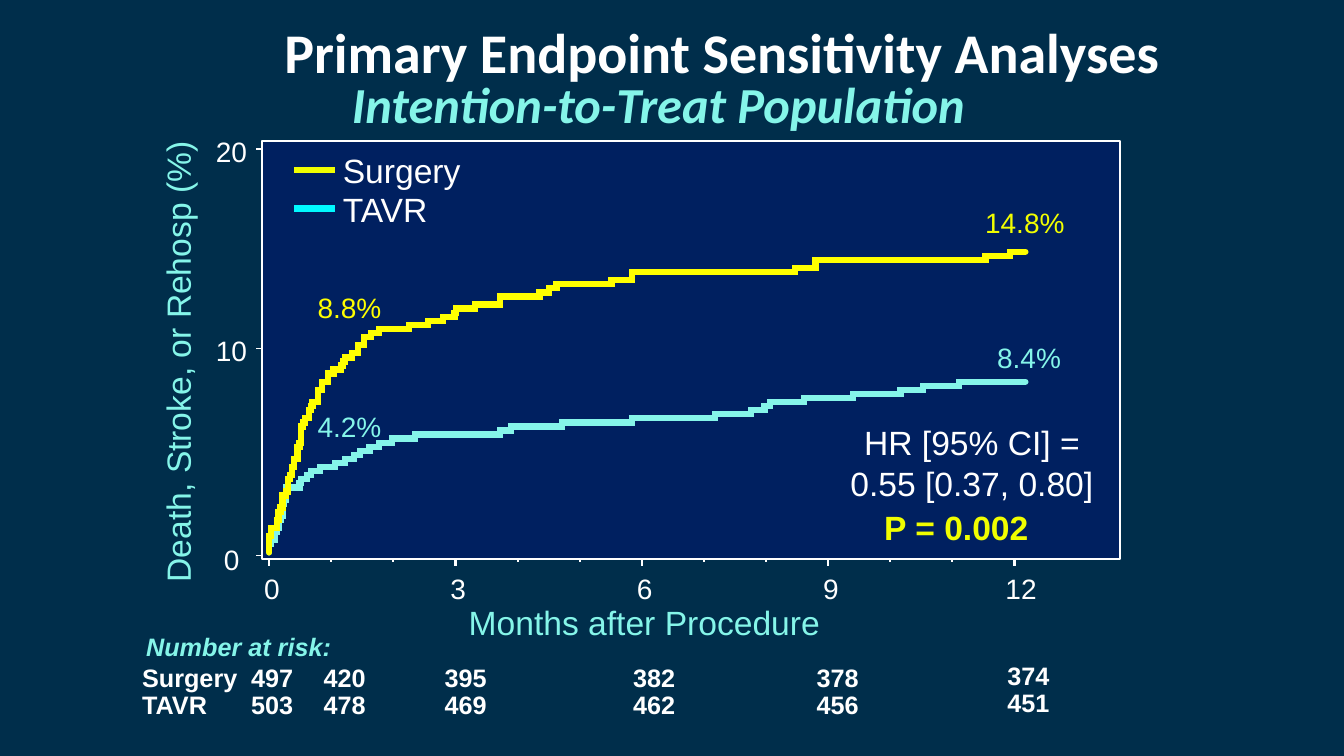
"""Build the slide of two cumulative event curves, worked out from event times."""
from collections import Counter
from lxml import etree
from pptx import Presentation
from pptx import util as u
from pptx.dml.color import RGBColor
from pptx.enum import shapes, text
from pptx.oxml.ns import qn

hues = {"back": "002E4B", "plot": "002060", "white": "FFFFFF", "mint": "85F5E9",
        "yellow": "FFFF00", "lemon": "F1FE00", "cyan": "00F9FF"}
hues = {name: RGBColor.from_string(code) for name, code in hues.items()}
inch = u.Inches

deck = Presentation()
deck.slide_width, deck.slide_height = inch(13.33), inch(7.5)
slide = deck.slides.add_slide(deck.slide_layouts[6])
slide.background.fill.solid()
slide.background.fill.fore_color.rgb = hues["back"]


def label(words, x, y, w, h, size, hue="white", bold=False, slant=False,
          face="Arial", mid=False, wrap=False):
    box = slide.shapes.add_textbox(inch(x), inch(y), inch(w), inch(h))
    frame = box.text_frame
    frame.margin_left = frame.margin_right = frame.margin_top = frame.margin_bottom = 0
    frame.word_wrap = wrap
    frame.text = words
    para = frame.paragraphs[0]
    para.alignment = text.PP_ALIGN.CENTER if mid else text.PP_ALIGN.LEFT
    font = para.runs[0].font
    font.size, font.name, font.bold, font.italic = u.Pt(size), face, bold, slant
    font.color.rgb = hues[hue]
    return box


def stroke(x1, y1, x2, y2, width, hue="white"):
    line = slide.shapes.add_connector(shapes.MSO_CONNECTOR.STRAIGHT,
                                      inch(x1), inch(y1), inch(x2), inch(y2))
    line.line.width = u.Pt(width)
    line.line.color.rgb = hues[hue]
    etree.SubElement(line._element.spPr, qn("a:effectLst"))


# Titles and plot area
label("Primary Endpoint Sensitivity Analyses", 1.04, 0.17, 12.24, 0.68, 40,
      bold=True, face="Calibri", mid=True, wrap=True)
label("Intention-to-Treat Population", 3.49, 0.73, 6.35, 0.61, 36, "mint",
      bold=True, slant=True, face="Calibri")

left, top, wide, high = 2.6, 1.4, 8.51, 4.15
plot = slide.shapes.add_shape(shapes.MSO_SHAPE.RECTANGLE,
                              inch(left), inch(top), inch(wide), inch(high))
plot.shadow.inherit = False
plot.fill.solid()
plot.fill.fore_color.rgb = hues["plot"]
plot.line.color.rgb = hues["white"]
plot.line.width = u.Pt(1.5)

# Event times count in 400ths of the follow-up; a time listed twice is two events
start, base, span, last = 2.67, 5.48, 7.5, 400
tavr = [0, 0, 1, 3, 3, 4, 5, 5, 6, 7, 7, 7, 8, 9, 9, 9, 16, 17, 20, 22, 27,
        35, 40, 45, 48, 53, 58, 65, 77, 122, 128, 155, 192, 236, 255, 262, 265,
        283, 309, 334, 346, 365]
surgery = [0, 0, 0, 0, 1, 1, 4, 4, 5, 5, 6, 7, 7, 7, 9, 10, 10, 10, 11, 12, 12,
           13, 13, 15, 15, 15, 16, 17, 17, 17, 17, 18, 19, 21, 21, 22, 23,
           26, 26, 26, 28, 28, 31, 31, 34, 38, 39, 40, 44, 47, 47, 50, 50, 54,
           58, 74, 84, 92, 98, 99, 109, 122, 122, 143, 148, 152, 181, 192, 192,
           278, 289, 289, 379, 392]

# Each event lifts its curve by 0.2 percent, so the events add up to the end rate
lift, percent = 0.2, 0.2015
for times, hue in [(tavr, "mint"), (surgery, "yellow")]:
    points, rate, y = [], 0, base
    for time, events in Counter(times).items():
        x = start + span * time / last
        points.append((inch(x), inch(y)))
        rate += lift * events
        y = base - percent * rate
        points.append((inch(x), inch(y)))
    points.append((inch(start + span), inch(y)))
    pen = slide.shapes.build_freeform(inch(start), inch(base))
    pen.add_line_segments(points, close=False)
    curve = pen.convert_to_shape()
    curve.shadow.inherit = False
    curve.fill.background()
    curve.line.color.rgb = hues[hue]
    curve.line.width = u.Pt(4.5)
    edge = curve._element.spPr.find(qn("a:ln"))
    edge.set("cap", "rnd")
    etree.SubElement(edge, qn("a:miter")).set("lim", "800000")

# Rates, test result and legend
for words, x, y, w, hue in [("8.8%", 3.15, 2.88, 0.64, "yellow"),
                            ("4.2%", 3.15, 4.06, 0.64, "mint"),
                            ("14.8%", 9.77, 2.04, 0.79, "lemon"),
                            ("8.4%", 9.89, 3.38, 0.64, "mint")]:
    label(words, x, y, w, 0.34, 20, hue)
label("HR [95% CI] = 0.55 [0.37, 0.80]", 8.24, 4.19, 2.8, 0.81, 24, mid=True, wrap=True)
label("P = 0.002", 8.77, 5.03, 1.74, 0.4, 24, "lemon", bold=True)
for row, (name, w, hue) in enumerate([("Surgery", 1.18, "lemon"), ("TAVR", 0.87, "cyan")]):
    y = 1.69 + 0.38 * row
    stroke(2.92, y, 3.32, y, 4.5, hue)
    label(name, 3.4, y - 0.2, w, 0.4, 24)

# Axes: a tick each month, a longer one with its number each quarter
for words, tick, drop in [("20", 1.48, 0.15), ("10", 3.46, 0.15), ("0", 5.51, 0.13)]:
    w = 0.16 * len(words)
    label(words, 2.3 - w / 2, tick - drop, w, 0.31, 20)
    stroke(left, tick, left - 0.06, tick, 1)
month, floor = 0.616, 5.56
for count in range(13):
    x = start + month * count
    if count % 3:
        stroke(x, floor, x, floor + 0.02, 1.5)
    else:
        words = str(count)
        stroke(x, floor, x, floor + 0.06, 1.5)
        label(words, x - 0.01 - 0.04 * len(words), 5.67, 0.16 * len(words), 0.34, 20)
label("Months after Procedure", 4.63, 5.97, 3.52, 0.4, 24, "mint", mid=True)
side = label("Death, Stroke, or Rehosp (%)", -0.45, 3.39, 4.42, 0.4, 24, "mint", mid=True)
side.rotation = 270

# Numbers at risk
label("Number at risk:", 1.45, 6.26, 1.85, 0.3, 18, "mint", bold=True, slant=True)
places = [(2.49, 0), (3.21, 0), (4.41, 0), (6.28, 0), (8.1, 0), (9.99, 0.02)]
for row, (name, w, counts) in enumerate([
        ("Surgery", 0.95, [497, 420, 395, 382, 378, 374]),
        ("TAVR", 0.65, [503, 478, 469, 462, 456, 451])]):
    y = 6.57 + 0.27 * row
    label(name, 1.41, y, w, 0.3, 18, bold=True)
    for (x, shift), count in zip(places, counts):
        label(str(count), x, y - shift, 0.42, 0.3, 18, bold=True)

deck.save("out.pptx")
